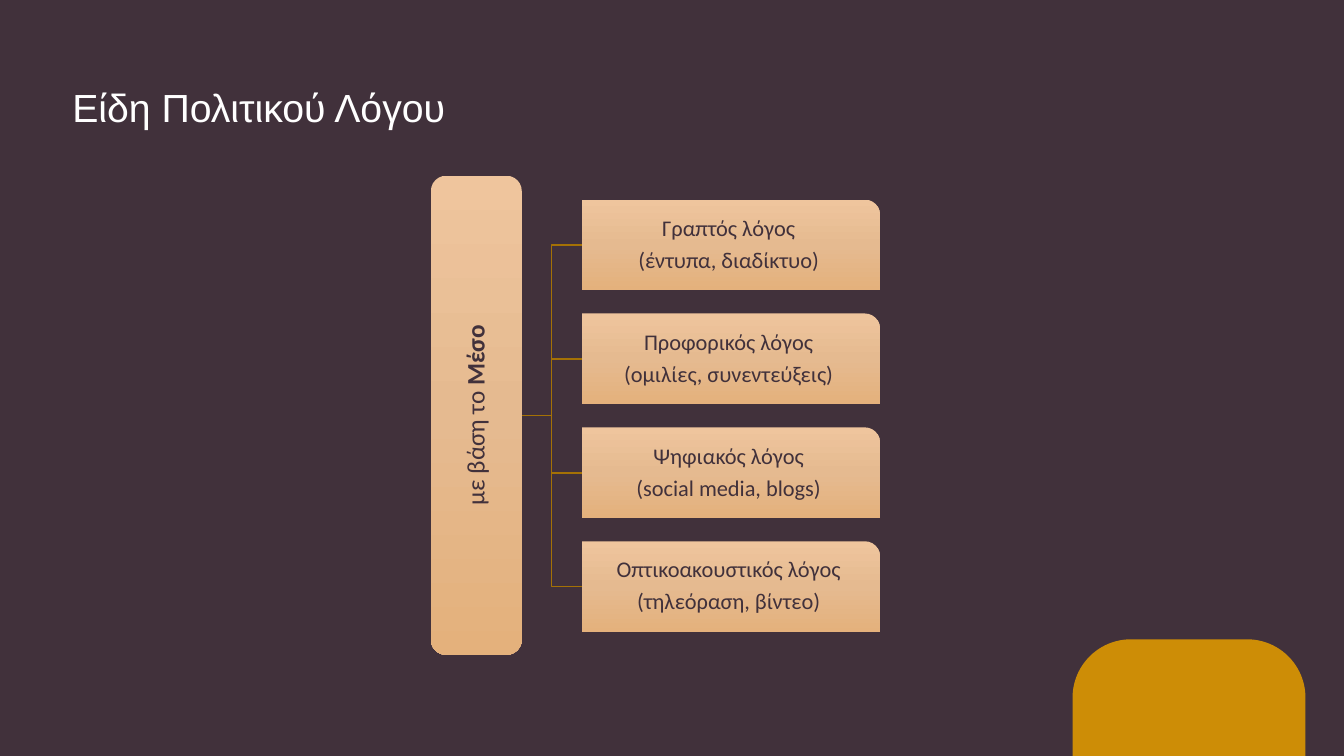
"""Build the slide on kinds of political speech, sorted by medium."""
from copy import deepcopy
from pptx import Presentation
from pptx.dml.color import RGBColor
from pptx.enum.shapes import MSO_CONNECTOR, MSO_SHAPE
from pptx.enum.text import MSO_ANCHOR, PP_ALIGN
from pptx.oxml.ns import qn
from pptx.oxml.xmlchemy import OxmlElement
from pptx.util import Cm, Pt


def rgb(value):
    return RGBColor.from_string(value)


def add_card(s, kind, x, y, w, h, lines, size):
    sp = s.shapes.add_shape(kind, Cm(x), Cm(y), Cm(w), Cm(h))
    sp.shadow.inherit = False
    sp.line.fill.background()
    sp.fill.gradient()
    sp.fill.gradient_angle = 270
    first = sp._element.spPr.find(".//" + qn("a:gs"))
    first.addnext(deepcopy(first))
    for stop, (pos, color) in zip(sp.fill.gradient_stops, GRADIENT):
        stop.position = pos
        stop.color.rgb = rgb(color)
    tf = sp.text_frame
    margins = dict.fromkeys(("margin_left", "margin_right", "margin_top", "margin_bottom"), Cm(0.03))
    for name, value in {"word_wrap": True, "vertical_anchor": MSO_ANCHOR.MIDDLE, **margins}.items():
        setattr(tf, name, value)
    for i, runs in enumerate(lines):
        p = tf.paragraphs[0] if i == 0 else tf.add_paragraph()
        p.alignment = PP_ALIGN.CENTER
        p.line_spacing = 0.9
        if i:
            p.space_before = Pt(5.6)
        for text, bold in runs:
            r = p.add_run()
            r.text = text
            for name, value in {"name": "Calibri", "size": Pt(size), "bold": bold}.items():
                setattr(r.font, name, value)
            r.font.color.rgb = rgb(DARK)
    return sp


DARK = "41313B"
GRADIENT = [(0, "EFC59D"), (0.5, "E5BA90"), (1, "E4B17C")]
MEDIA = [
    ("Γραπτός λόγος", "(έντυπα, διαδίκτυο)"),
    ("Προφορικός λόγος", "(ομιλίες, συνεντεύξεις)"),
    ("Ψηφιακός λόγος", "(social media, blogs)"),
    ("Οπτικοακουστικός λόγος", "(τηλεόραση, βίντεο)"),
]
ROOT_X, ROOT_Y, ROOT_H = 10.86, 4.43, 12.07
CARD_X, CARD_Y, CARD_W, CARD_H, STEP = 14.66, 5.03, 7.52, 2.29, 2.87

prs = Presentation()
prs.slide_width, prs.slide_height = Cm(33.87), Cm(19.05)
s = prs.slides.add_slide(prs.slide_layouts[5])
s.background.fill.solid()
s.background.fill.fore_color.rgb = rgb(DARK)

title = s.shapes.title
for name, value in {"left": 1.57, "top": 1.68, "width": 30.71, "height": 1.63}.items():
    setattr(title, name, Cm(value))
tf = title.text_frame
tf.vertical_anchor = MSO_ANCHOR.TOP
p = tf.paragraphs[0]
p.alignment = PP_ALIGN.LEFT
p.line_spacing = Pt(42)
r = p.add_run()
r.text = "Είδη Πολιτικού Λόγου"
for name, value in {"name": "Arial", "size": Pt(28)}.items():
    setattr(r.font, name, value)
r.font.color.rgb = rgb("FFFFFF")

sun = s.shapes.add_shape(MSO_SHAPE.ROUND_2_SAME_RECTANGLE, Cm(27.03), Cm(16.11), Cm(5.87), Cm(2.94))
sun.adjustments[0] = 0.5
sun.shadow.inherit = False
sun.fill.solid()
sun.fill.fore_color.rgb = rgb("CD8D06")
sun.line.fill.background()

root_mid = ROOT_Y + ROOT_H / 2
for i, lines in enumerate(MEDIA):
    y = CARD_Y + i * STEP
    link = s.shapes.add_connector(MSO_CONNECTOR.ELBOW, Cm(ROOT_X + CARD_H), Cm(root_mid),
                                  Cm(CARD_X), Cm(y + CARD_H / 2))
    link.line.color.rgb = rgb("A47105")
    link.line.width = Pt(1)
    link._element.spPr.append(OxmlElement("a:effectLst"))
    add_card(s, MSO_SHAPE.ROUND_1_RECTANGLE, CARD_X, y, CARD_W, CARD_H,
             [[(line, False)] for line in lines], 16)

root = add_card(s, MSO_SHAPE.ROUNDED_RECTANGLE, ROOT_X, ROOT_Y, CARD_H, ROOT_H,
                [[("με βάση το ", False), ("Μέσο", True)]], 18)
root.text_frame._txBody.bodyPr.set("vert", "vert270")

prs.save("out.pptx")
